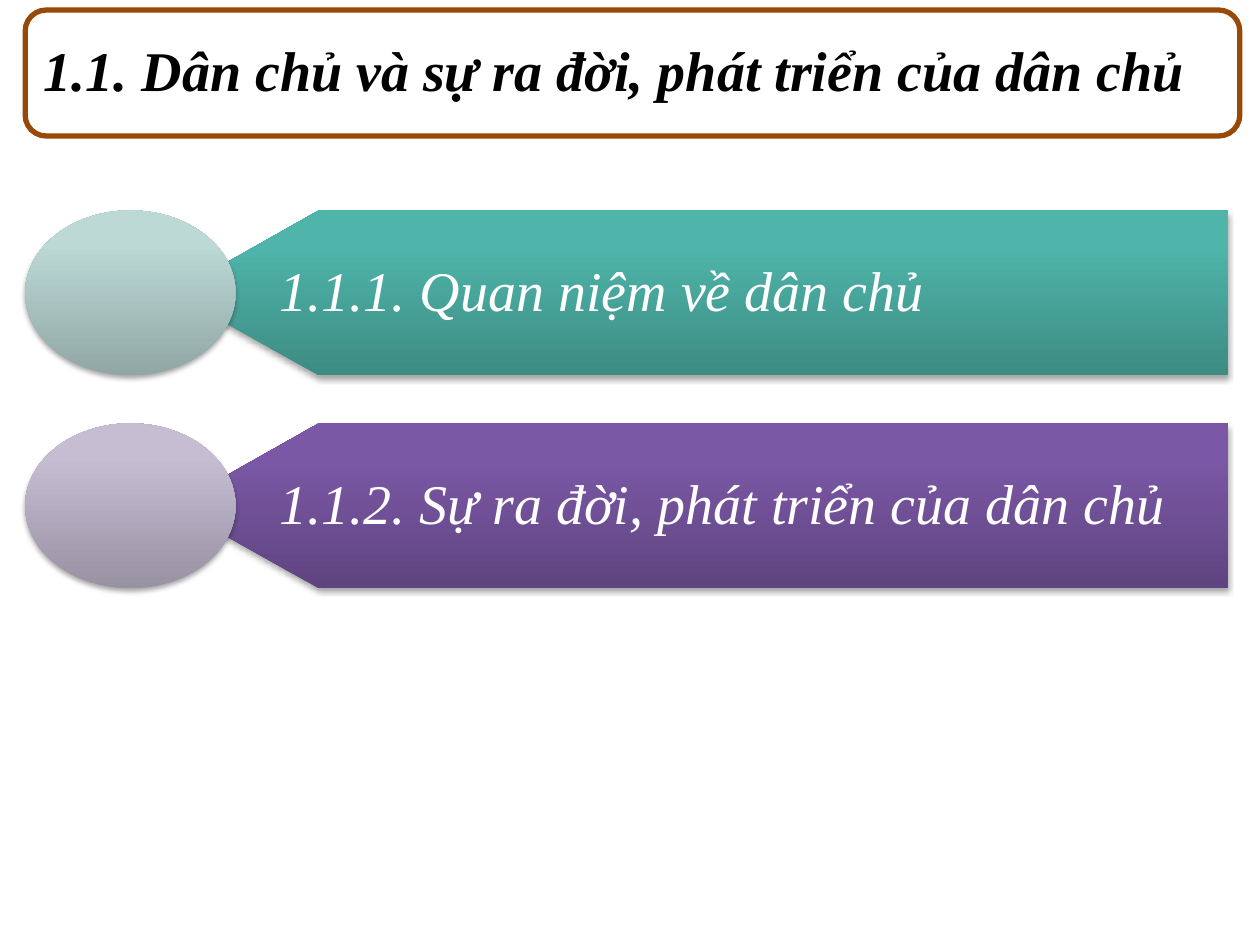
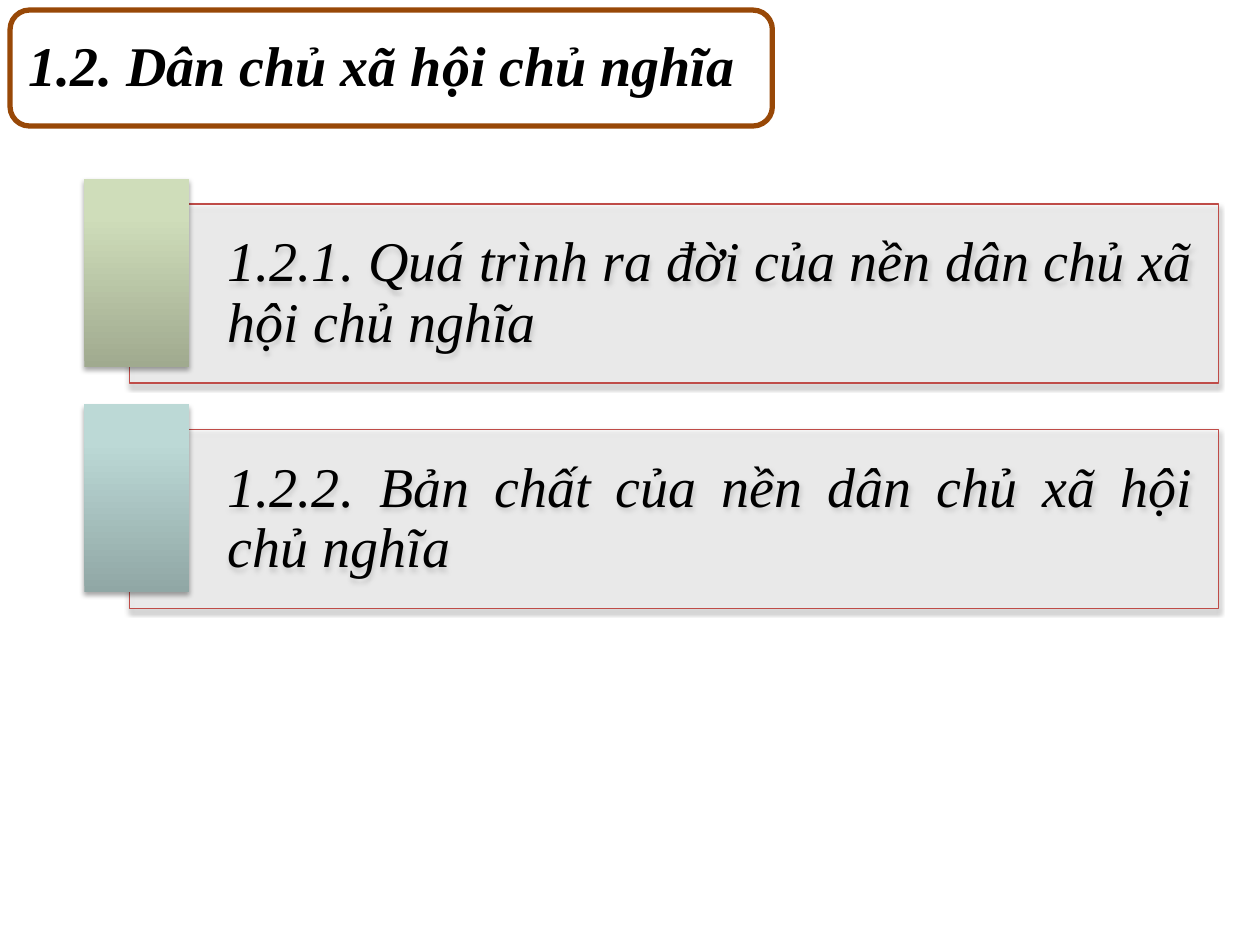
from dataclasses import dataclass

from lxml.etree import SubElement
from pptx import Presentation
from pptx.dml.color import RGBColor
from pptx.enum.shapes import MSO_SHAPE as Preset
from pptx.enum.text import MSO_ANCHOR as Anchor, PP_ALIGN as Align
from pptx.oxml.ns import qn
from pptx.util import Inches, Pt


@dataclass(frozen=True)
class Theme:
    """Colours, type and gradients shared by the slides."""
    font: str = "Times New Roman"
    size: float = 32
    line_spacing: float = 0.9
    space_after: float = 11.2
    black: str = "000000"
    white: str = "FFFFFF"
    title_border: str = "984807"
    card_border: str = "BF4C48"
    teal: tuple = ("3D8C83", "4FB5AA", "4EB8AC")
    purple: tuple = ("5F4480", "7B58A6", "7C57A8")
    pale_teal: tuple = ("90A7A5", "BCD9D6", "BCDAD7")
    pale_purple: tuple = ("9992A2", "C6BDD3", "C7BED4")
    pale_green: tuple = ("A0AA8F", "CFDDBA", "D0DFBA")


THEME = Theme()
GRADIENT_STOPS = (0, 80, 100)


def set_line(shape, color, width):
    """Draw a solid outline."""
    shape.line.color.rgb = RGBColor.from_string(color)
    shape.line.width = Pt(width)


def set_gradient(shape, colors):
    """Fill a shape from bottom to top with three colours and no outline."""
    shape.fill.gradient()
    shape.fill.gradient_angle = 90
    stops = shape._element.spPr.find(qn("a:gradFill")).find(qn("a:gsLst"))
    for stop in list(stops):
        stops.remove(stop)
    for position, color in zip(GRADIENT_STOPS, colors):
        stop = SubElement(stops, qn("a:gs"), pos=str(position * 1000))
        SubElement(stop, qn("a:srgbClr"), val=color)
    shape.line.fill.background()


def set_glass(shape, color, opacity):
    """Fill a shape with a partly transparent colour."""
    shape.fill.solid()
    shape.fill.fore_color.rgb = RGBColor.from_string(color)
    tint = shape._element.spPr.find(qn("a:solidFill")).find(qn("a:srgbClr"))
    SubElement(tint, qn("a:alpha"), val=str(opacity * 1000))


def set_shadow(shape):
    """Drop a soft shadow straight down."""
    shape.shadow.inherit = False
    effects = shape._element.spPr.find(qn("a:effectLst"))
    shadow = SubElement(effects, qn("a:outerShdw"), blurRad=str(Pt(3.1)),
                        dist=str(Pt(1.8)), dir="5400000", rotWithShape="0")
    color = SubElement(shadow, qn("a:srgbClr"), val=THEME.black)
    SubElement(color, qn("a:alpha"), val="35000")


def set_text(shape, text, color, bold=False, insets=(0.1, 0.05, 0.1, 0.05)):
    """Write one justified italic paragraph, centred vertically."""
    frame = shape.text_frame
    frame.word_wrap = True
    frame.vertical_anchor = Anchor.MIDDLE
    (frame.margin_left, frame.margin_top,
     frame.margin_right, frame.margin_bottom) = map(Inches, insets)
    paragraph = frame.paragraphs[0]
    paragraph.text = text
    paragraph.alignment = Align.JUSTIFY
    paragraph.line_spacing = THEME.line_spacing
    paragraph.space_after = Pt(THEME.space_after)
    font = paragraph.font
    font.name, font.size = THEME.font, Pt(THEME.size)
    font.bold, font.italic = bold, True
    font.color.rgb = RGBColor.from_string(color)


def add_polygon(shapes, points):
    """Build a closed outline from points in inches."""
    start, *others = [(Inches(x), Inches(y)) for x, y in points]
    builder = shapes.build_freeform(*start)
    builder.add_line_segments(others, close=True)
    return builder.convert_to_shape()


def add_marker(shapes, preset, box, colors):
    """Place the gradient marker in front of an entry."""
    marker = shapes.add_shape(preset, *map(Inches, box))
    set_gradient(marker, colors)
    set_shadow(marker)


def add_title(slide, box, text):
    """Place the rounded title frame."""
    title = slide.shapes.add_shape(Preset.ROUNDED_RECTANGLE, *map(Inches, box))
    title.fill.background()
    title.shadow.inherit = False
    set_line(title, THEME.title_border, 3)
    set_text(title, text, THEME.black, bold=True)


def add_pennant(shapes, box, text, colors, marker_colors):
    """Place a pointed band with an oval over its tip."""
    left, top, width, height = box
    oval_width, shoulder = 1.67, 2.33
    tip, right, bottom = left + 1.17, left + width, top + height
    band = add_polygon(shapes, [
        (right, bottom), (left + shoulder, bottom), (tip, top + height / 2),
        (left + shoulder, top), (right, top)])
    set_gradient(band, colors)
    set_shadow(band)
    set_text(band, text, THEME.white, insets=(0.85, 0.22, 0.4, 0.22))
    add_marker(shapes, Preset.OVAL, (left, top, oval_width, height), marker_colors)


def add_card(shapes, box, text, marker_colors):
    """Place an outlined card with a tab over its upper left corner."""
    left, top, width, height = box
    card_left, card_top = left + 0.36, top + 0.2
    right, bottom = left + width, top + height
    card = add_polygon(shapes, [
        (card_left, card_top), (right, card_top),
        (right, bottom), (card_left, bottom)])
    set_glass(card, THEME.white, 40)
    set_line(card, THEME.card_border, 0.75)
    set_shadow(card)
    set_text(card, text, THEME.black, insets=(0.78, 0.2, 0.2, 0.2))
    add_marker(shapes, Preset.RECTANGLE, (left, top, 0.83, 1.49), marker_colors)


def add_entries(slide, add_entry, box, pitch, entries):
    """Stack a group of entries at an equal pitch from the first box."""
    left, top, width, height = box
    shapes = slide.shapes.add_group_shape().shapes
    for index, entry in enumerate(entries):
        add_entry(shapes, (left, top + index * pitch, width, height), *entry)


def add_topic_slide(presentation, title_box, title, *entry_layout):
    """Add a slide with a title and its stacked entries."""
    slide = presentation.slides.add_slide(presentation.slide_layouts[6])
    add_title(slide, title_box, title)
    add_entries(slide, *entry_layout)


def main():
    """Build and save the presentation."""
    presentation = Presentation()
    presentation.slide_width, presentation.slide_height = Inches(10), Inches(7.5)
    add_topic_slide(
        presentation, (0.2, 0.08, 9.64, 1),
        "1.1. Dân chủ và sự ra đời, phát triển của dân chủ",
        add_pennant, (0.2, 1.67, 9.55, 1.31), 1.69, [
            ("1.1.1. Quan niệm về dân chủ", THEME.teal, THEME.pale_teal),
            ("1.1.2. Sự ra đời, phát triển của dân chủ",
             THEME.purple, THEME.pale_purple)])
    add_topic_slide(
        presentation, (0.08, 0.08, 6.05, 0.92),
        "1.2. Dân chủ xã hội chủ nghĩa",
        add_card, (0.67, 1.42, 9, 1.62), 1.79, [
            ("1.2.1. Quá trình ra đời của nền dân chủ xã hội chủ nghĩa",
             THEME.pale_green),
            ("1.2.2. Bản chất của nền dân chủ xã hội chủ nghĩa",
             THEME.pale_teal)])
    presentation.save("out.pptx")


if __name__ == "__main__":
    main()
